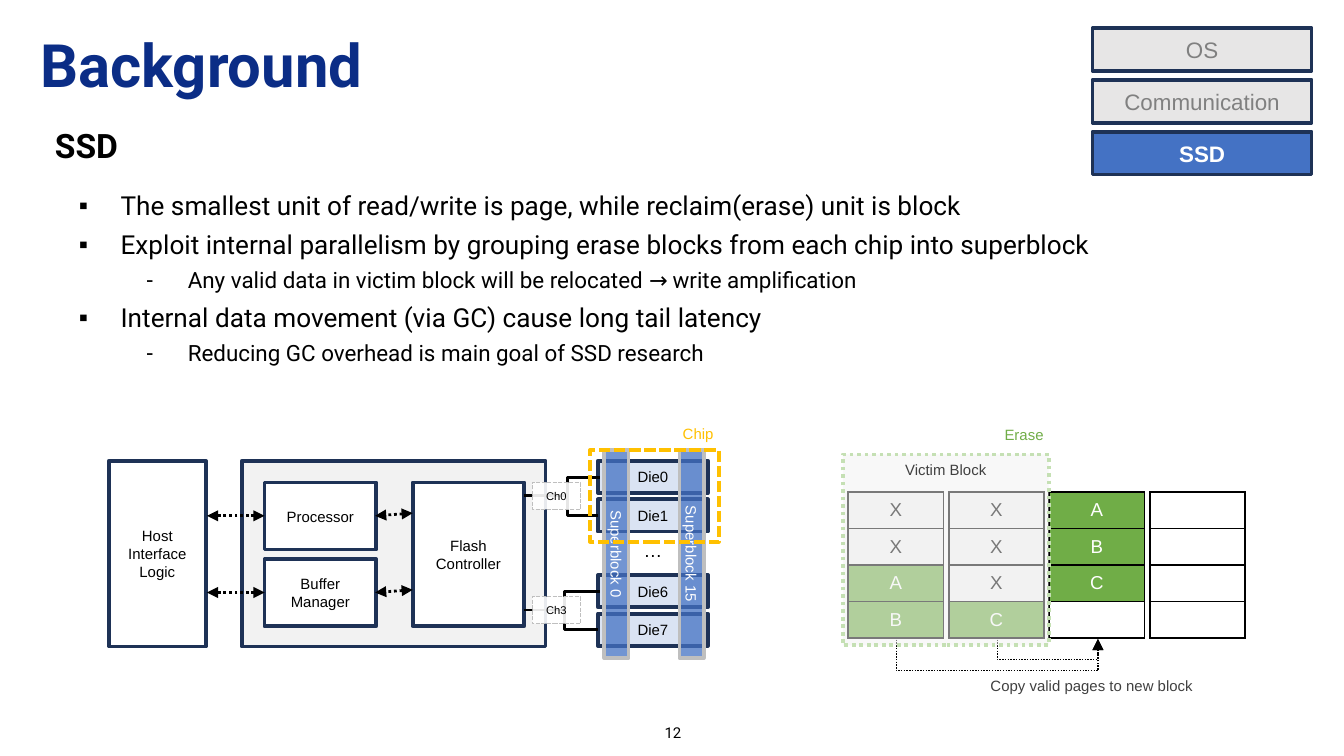
from dataclasses import dataclass

from lxml.etree import SubElement
from pptx import Presentation
from pptx.dml.color import RGBColor
from pptx.enum.dml import MSO_LINE
from pptx.enum.shapes import MSO_CONNECTOR, MSO_SHAPE
from pptx.enum.text import MSO_ANCHOR, MSO_AUTO_SIZE, PP_ALIGN
from pptx.oxml.ns import qn
from pptx.util import Cm, Pt


@dataclass(frozen=True)
class Theme:
    heading: str = "Roboto"
    label: str = "Arial"
    title: str = "0B2D86"
    navy: str = "1E3256"
    blue: str = "4472C4"
    pale_blue: str = "DAE3F3"
    black: str = "000000"
    white: str = "FFFFFF"
    panel: str = "F2F2F2"
    inactive: str = "E7E6E6"
    muted: str = "808080"
    dark: str = "404040"
    silver: str = "BFBFBF"
    green: str = "70AD47"
    pale_green: str = "C5E0B4"
    amber: str = "FFC000"
    title_size: float = 32
    subtitle_size: float = 18
    list_sizes: tuple = (14, 12)
    tab_size: float = 12
    cell_size: float = 10
    label_size: float = 8
    channel_size: float = 6


def apply(target, values):
    for name, value in values.items():
        setattr(target, name, value)


class SlideBuilder:
    def __init__(self, slide, theme):
        self.slide = slide
        self.theme = theme

    def lines(self, frame, text, size, color, font=None, bold=False, align=PP_ALIGN.CENTER, spacing=1.0):
        for index, line in enumerate(text.split("\n")):
            para = frame.paragraphs[0] if index == 0 else frame.add_paragraph()
            apply(para, dict(alignment=align, line_spacing=spacing, space_before=Pt(0)))
            self.span(para, line, size, color, font or self.theme.label, bold)

    def span(self, para, text, size, color, font, bold=False):
        span = para.add_run()
        span.text = text
        apply(span.font, dict(name=font, size=Pt(size), bold=bold))
        span.font.color.rgb = RGBColor.from_string(color)

    def place(self, box, area):
        apply(box, dict(zip(("left", "top", "width", "height"), map(Cm, area))))
        margins = dict(margin_left=Cm(0.18), margin_right=Cm(0.18), margin_top=Cm(0.1), margin_bottom=Cm(0.1))
        apply(box.text_frame, dict(auto_size=MSO_AUTO_SIZE.NONE, word_wrap=True, **margins))

    def title(self, text, area):
        box = self.slide.shapes.title
        self.place(box, area)
        box.text_frame.vertical_anchor = MSO_ANCHOR.MIDDLE
        theme = self.theme
        self.lines(box.text_frame, text, theme.title_size, theme.title, theme.heading, True, PP_ALIGN.LEFT, 0.9)

    def bullets(self, items, area):
        box = self.slide.placeholders[1]
        self.place(box, area)
        frame = box.text_frame
        frame.vertical_anchor = MSO_ANCHOR.TOP
        for index, (level, text) in enumerate(items):
            para = frame.paragraphs[0] if index == 0 else frame.add_paragraph()
            apply(para, dict(level=level, line_spacing=1.25, space_before=Pt(0), alignment=PP_ALIGN.LEFT))
            properties = para._p.get_or_add_pPr()
            properties.set("marL", str(Cm(1.19 + 1.27 * level)))
            properties.set("indent", str(Cm(-0.79)))
            color = SubElement(properties, qn("a:buClr"))
            SubElement(color, qn("a:srgbClr"), val=self.theme.black)
            SubElement(properties, qn("a:buFont"), typeface=self.theme.label)
            SubElement(properties, qn("a:buChar"), char="▪-"[level])
            self.span(para, text, self.theme.list_sizes[level], self.theme.black, self.theme.heading)

    def heading(self, text, area, size, **style):
        box = self.slide.shapes.add_textbox(*map(Cm, area))
        self.place(box, area)
        box.text_frame.vertical_anchor = MSO_ANCHOR.MIDDLE
        self.lines(box.text_frame, text, size, self.theme.black, self.theme.heading, **style)

    def label(self, text, area, color, size=None, **style):
        frame = self.slide.shapes.add_textbox(*map(Cm, area)).text_frame
        apply(frame, dict(word_wrap=False, auto_size=MSO_AUTO_SIZE.SHAPE_TO_FIT_TEXT))
        self.lines(frame, text, size or self.theme.label_size, color, **style)

    def block(self, area, fill=None, text="", color=None, size=None, bold=False, line=None, width=2,
              dash=None, opacity=100, rotation=0, anchor=MSO_ANCHOR.MIDDLE, wrap=True):
        box = self.slide.shapes.add_shape(MSO_SHAPE.RECTANGLE, *map(Cm, area))
        box.shadow.inherit = False
        box.rotation = rotation
        if fill:
            box.fill.solid()
            box.fill.fore_color.rgb = RGBColor.from_string(fill)
            if opacity < 100:
                shade = box._element.spPr.find(qn("a:solidFill"))[0]
                SubElement(shade, qn("a:alpha"), val=str(opacity * 1000))
        else:
            box.fill.background()
        self.stroke(box.line, line or self.theme.navy, width, dash)
        apply(box.text_frame, dict(vertical_anchor=anchor, word_wrap=wrap))
        if text:
            self.lines(box.text_frame, text, size or self.theme.label_size, color or self.theme.black, bold=bold)

    def stroke(self, line, color, width, dash=None):
        line.color.rgb = RGBColor.from_string(color)
        line.width = Pt(width)
        if dash:
            line.dash_style = dash

    def connector(self, start, end, width=1.5, dash=None, heads=(), reach=None, rotation=0):
        kind = MSO_CONNECTOR.ELBOW if reach else MSO_CONNECTOR.STRAIGHT
        link = self.slide.shapes.add_connector(kind, *map(Cm, start + end))
        self.stroke(link.line, self.theme.black, width, dash)
        properties = link._element.spPr
        for head in heads:
            SubElement(properties.find(qn("a:ln")), qn(f"a:{head}"), type="triangle")
        SubElement(properties, qn("a:effectLst"))
        if rotation:
            properties.find(qn("a:xfrm")).set("rot", str(rotation * 60000))
        if reach:
            ratio = round(reach / (start[0] - end[0]) * 100000)
            guides = properties.find(qn("a:prstGeom")).find(qn("a:avLst"))
            SubElement(guides, qn("a:gd"), name="adj1", fmla=f"val {ratio}")

    def pages(self, left, top, width, row_height, values):
        theme = self.theme
        area = map(Cm, (left, top, width, row_height * len(values)))
        table = self.slide.shapes.add_table(len(values), 1, *area).table
        apply(table, dict(first_row=False, horz_banding=False))
        fills = {"X": theme.panel, " ": theme.white}
        for index, value in enumerate(values):
            table.rows[index].height = Cm(row_height)
            cell = table.cell(index, 0)
            apply(cell, dict(vertical_anchor=MSO_ANCHOR.MIDDLE, margin_top=0, margin_bottom=0))
            if value == " ":
                para = cell.text_frame.paragraphs[0]
                SubElement(para._p, qn("a:endParaRPr"), sz=str(theme.cell_size * 100))
            else:
                color = theme.black if value == "X" else theme.white
                self.lines(cell.text_frame, value, theme.cell_size, color)
            properties = cell._tc.get_or_add_tcPr()
            for side in ("lnL", "lnR", "lnT", "lnB"):
                border = SubElement(properties, qn(f"a:{side}"), w=str(Pt(1)))
                paint = SubElement(border, qn("a:solidFill"))
                SubElement(paint, qn("a:srgbClr"), val=theme.black)
            cell.fill.solid()
            cell.fill.fore_color.rgb = RGBColor.from_string(fills.get(value, theme.green))


def draw_device(page, theme):
    page.block((4.57, 8.71, 5.74, 3.51), theme.panel)
    for text, area in (
        ("Host\nInterface\nLogic", (2.06, 8.71, 1.83, 3.51)),
        ("Processor", (5, 9.12, 2.11, 1.27)),
        ("Buffer Manager", (5, 10.57, 2.11, 1.27)),
        ("Flash\nController", (7.8, 9.12, 2.11, 2.72)),
    ):
        page.block(area, theme.white, text)
    for middle in (9.75, 11.2):
        for start, end in (((5, middle), (3.91, middle)), ((7.8, middle - 0.05), (7.09, middle))):
            page.connector(start, end, dash=MSO_LINE.ROUND_DOT, heads=("headEnd", "tailEnd"))
    for first, top, bus in ((0, 8.71, 10.72), (6, 10.87, 10.67)):
        for offset in (0, 1):
            page.block((11.3, top + 0.73 * offset, 2.08, 0.61), theme.pale_blue, f"Die{first + offset}")
        middle = top + 0.31
        page.connector((11.34, middle), (11.3, middle + 0.72), reach=11.34 - bus)
    page.label("…", (11.91, 10.06, 0.86, 0.69), theme.black, theme.cell_size)
    for text, top, bus in (("Ch0", 9.12, 10.72), ("Ch3", 11.28, 10.67)):
        page.connector((9.91, top + 0.25), (bus, top + 0.25))
        page.block((10.06, top, 0.91, 0.51), theme.white, text, size=theme.channel_size, line=theme.silver,
                   width=0.75, dash=MSO_LINE.SQUARE_DOT, opacity=90, wrap=False)
    for number, left in ((0, 9.68), (15, 11.1)):
        page.block((left, 10.24, 3.94, 0.46), theme.blue, f"Superblock {number}", theme.white,
                   line=theme.silver, opacity=75, rotation=90)
    page.block((11.15, 8.51, 2.44, 1.73), line=theme.amber, dash=MSO_LINE.SQUARE_DOT)
    page.label("Chip", (12.65, 7.9, 1.09, 0.61), theme.amber)


def draw_erase(page, theme):
    page.label("Erase", (18.72, 7.92, 1.27, 0.61), theme.green)
    page.label("Copy valid pages to new block", (18.47, 12.67, 4.39, 0.61), theme.dark, align=PP_ALIGN.LEFT)
    for column, values in enumerate(("XXAB", "XXXC", "ABC ", "    ")):
        page.pages(16.03 + 1.9 * column, 9.3, 1.8, 0.69, values)
    target, base = 20.75, 12.06
    for source, reach in ((16.94, 0.64), (18.85, 0.43)):
        center, half = (source + target) / 2, (target - source) / 2
        page.connector((center + 0.02, base - half), (center - 0.02, base + half), 0.75,
                       MSO_LINE.ROUND_DOT, ("tailEnd",), reach, 270)
    page.block((15.93, 8.59, 3.89, 3.61), theme.panel, "Victim Block", theme.dark, line=theme.pale_green,
               dash=MSO_LINE.ROUND_DOT, opacity=50, anchor=MSO_ANCHOR.TOP)


def main():
    theme = Theme()
    deck = Presentation()
    apply(deck, dict(slide_width=Cm(25.4), slide_height=Cm(14.29)))
    page = SlideBuilder(deck.slides.add_slide(deck.slide_layouts[1]), theme)
    page.title("Background", (0.58, 0.43, 17.32, 1.73))
    page.bullets((
        (0, "The smallest unit of read/write is page, while reclaim(erase) unit is block"),
        (0, "Exploit internal parallelism by grouping erase blocks from each chip into superblock"),
        (1, "Any valid data in victim block will be relocated → write amplification"),
        (0, "Internal data movement (via GC) cause long tail latency"),
        (1, "Reducing GC overhead is main goal of SSD research"),
    ), (0.91, 3.33, 23.6, 10.01))
    page.heading("12", (9.86, 13.54, 5.72, 0.61), theme.label_size)
    page.heading("SSD", (0.86, 2.16, 23.65, 1.17), theme.subtitle_size, bold=True, align=PP_ALIGN.LEFT)
    for index, text in enumerate(("OS", "Communication", "SSD")):
        active = text == "SSD"
        page.block((20.65, 0.53 + 0.98 * index, 4.14, 0.81), theme.blue if active else theme.inactive,
                   text, theme.white if active else theme.muted, theme.tab_size, active)
    draw_device(page, theme)
    draw_erase(page, theme)
    deck.save("out.pptx")


if __name__ == "__main__":
    main()
